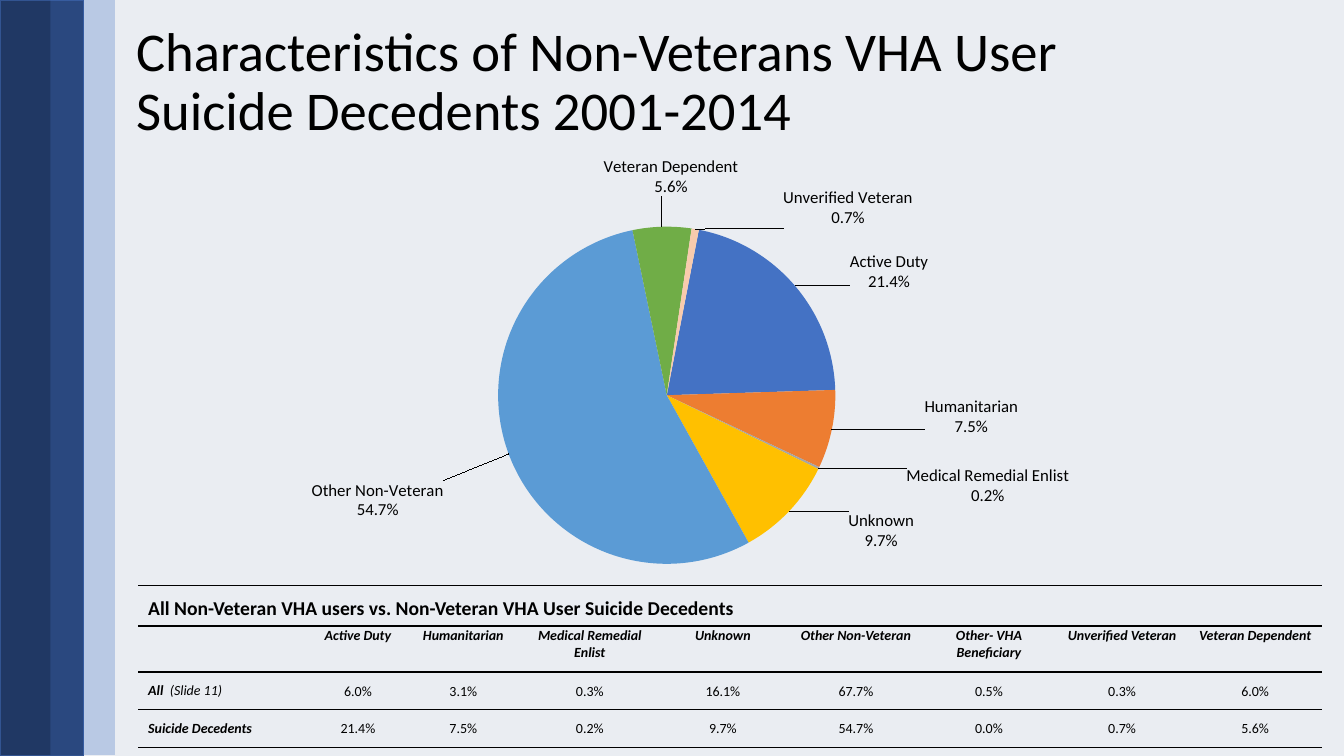
from pptx import Presentation
from pptx.chart.data import CategoryChartData
from pptx.dml.color import RGBColor
from pptx.enum import chart as charts, shapes, text
from pptx.oxml import parse_xml
from pptx.oxml.ns import nsdecls, qn
from pptx.util import Inches, Pt

COLORS = {"page": "EAEDF2", "ink": "000000", "navy": "203864",
          "edge": "325491", "blue": "4472C4"}
FONT = "Calibri"

# Slice: name, percent, colour, label shift as a share of the chart
SLICES = [
    ("Active Duty", 21.4, "4472C4", 0.055, 0.02),
    ("Humanitarian", 7.5, "ED7D31", 0.095, -0.07),
    ("Medical Remedial Enlist", 0.2, "A5A5A5", 0.09, -0.01),
    ("Unknown", 9.7, "FFC000", 0.06, -0.01),
    ("Other Non-Veteran", 54.7, "5B9BD5", -0.065, 0.05),
    ("Veteran Dependent", 5.6, "70AD47", 0.01, -0.05),
    ("Unverified Veteran", 0.7, "F8CBAD", 0.095, 0.01),
]
TABLE_TITLE = "All Non-Veteran VHA users vs. Non-Veteran VHA User Suicide Decedents"
ROWS = [
    ["", "Active Duty", "Humanitarian", "Medical Remedial Enlist", "Unknown",
     "Other Non-Veteran", "Other- VHA Beneficiary", "Unverified Veteran",
     "Veteran Dependent"],
    ["All  ", "6.0%", "3.1%", "0.3%", "16.1%", "67.7%", "0.5%", "0.3%", "6.0%"],
    ["Suicide Decedents", "21.4%", "7.5%", "0.2%", "9.7%", "54.7%", "0.0%",
     "0.7%", "5.6%"],
]


def style(font, size, bold=False, italic=False):
    font.name, font.size = FONT, Pt(size)
    font.bold, font.italic = bold, italic
    font.color.rgb = RGBColor.from_string(COLORS["ink"])


def rule_cell(cell, top, bottom):
    props = cell._tc.get_or_add_tcPr()
    for position, (side, width) in enumerate(
            [("lnL", 0), ("lnR", 0), ("lnT", top), ("lnB", bottom)]):
        fill = (f'<a:solidFill><a:srgbClr val="{COLORS["ink"]}"/></a:solidFill>'
                if width else "<a:noFill/>")
        props.insert(position, parse_xml(
            f'<a:{side} {nsdecls("a")} w="{Pt(width)}">{fill}</a:{side}>'))


deck = Presentation()
deck.slide_width, deck.slide_height = Inches(13.33), Inches(7.5)
page = deck.slides.add_slide(deck.slide_layouts[5])
page.background.fill.solid()
page.background.fill.fore_color.rgb = RGBColor.from_string(COLORS["page"])

# Title
title = page.shapes.title
title.left, title.top = Inches(1.25), Inches(0.08)
title.width, title.height = Inches(10.58), Inches(1.5)
title.text_frame.text = "Characteristics of Non-Veterans VHA User Suicide Decedents 2001-2014"
title.text_frame.word_wrap = True
title.text_frame.auto_size = text.MSO_AUTO_SIZE.NONE
title.text_frame.vertical_anchor = text.MSO_ANCHOR.MIDDLE
para = title.text_frame.paragraphs[0]
para.alignment, para.line_spacing = text.PP_ALIGN.LEFT, 0.9
style(para.runs[0].font, 39)

# Pie chart
data = CategoryChartData(number_format="0.0")
data.categories = [item[0] for item in SLICES]
data.add_series("Series 1", [item[1] for item in SLICES])
chart = page.shapes.add_chart(
    charts.XL_CHART_TYPE.PIE, Inches(2.5), Inches(1.42),
    Inches(9.07), Inches(4.82), data).chart
chart.has_legend = chart.has_title = False
style(chart.font, 10)
plot = chart.plots[0]
plot.vary_by_categories = True
pie = plot._element
angle = pie.find(qn("c:firstSliceAng"))
if angle is None:
    angle = parse_xml(f'<c:firstSliceAng {nsdecls("c")}/>')
    pie.append(angle)
angle.set("val", "11")

# Plot area placement
area = chart._chartSpace.chart.plotArea
for layout in area.findall(qn("c:layout")):
    area.remove(layout)
area.insert(0, parse_xml(
    f'<c:layout {nsdecls("c")}><c:manualLayout><c:layoutTarget val="inner"/>'
    '<c:xMode val="edge"/><c:yMode val="edge"/><c:x val="0.26"/><c:y val="0.172"/>'
    '<c:w val="0.387"/><c:h val="0.694"/></c:manualLayout></c:layout>'))

# Slices and their shifted labels
series = plot.series[0]
labels = series.data_labels
labels.show_value = labels.show_category_name = True
labels.show_percentage = False
labels.number_format, labels.number_format_is_linked = '0.0"%"', False
labels.position = charts.XL_LABEL_POSITION.OUTSIDE_END
style(labels.font, 12)
for index, (name, value, color, shift_x, shift_y) in enumerate(SLICES):
    fill = series.points[index].format.fill
    fill.solid()
    fill.fore_color.rgb = RGBColor.from_string(color)
    labels._element.insert(index, parse_xml(
        f'<c:dLbl {nsdecls("c")}><c:idx val="{index}"/><c:layout><c:manualLayout>'
        f'<c:x val="{shift_x}"/><c:y val="{shift_y}"/></c:manualLayout></c:layout>'
        '<c:dLblPos val="outEnd"/><c:showLegendKey val="0"/><c:showVal val="1"/>'
        '<c:showCatName val="1"/><c:showSerName val="0"/><c:showPercent val="0"/>'
        '<c:showBubbleSize val="0"/><c:separator>\n</c:separator></c:dLbl>'))

# Comparison table
widths = [1.73, 0.9, 1.19] + [1.32] * 6
heights = [0.4, 0.46, 0.37, 0.38]
table = page.shapes.add_table(
    len(heights), len(widths), Inches(1.37), Inches(5.81),
    Inches(sum(widths)), Inches(sum(heights))).table
table.first_row = table.horz_banding = False
for column, width in zip(table.columns, widths):
    column.width = Inches(width)
for row, height in zip(table.rows, heights):
    row.height = Inches(height)
table.cell(0, 0).merge(table.cell(0, len(widths) - 1))

rules = [1, 1, 1.5, 1, 1]
for r, words in enumerate([[TABLE_TITLE] + [""] * 8] + ROWS):
    for c, word in enumerate(words):
        cell = table.cell(r, c)
        cell.fill.background()
        rule_cell(cell, rules[r], rules[r + 1])
        cell.text_frame.text = word
        para = cell.text_frame.paragraphs[0]
        heading = r == 1 or c == 0
        style(para.font, 14 if r == 0 else 10, heading, heading and r > 0)
        for span in para.runs:
            style(span.font, 14 if r == 0 else 10, heading, heading and r > 0)
        cell.vertical_anchor = [text.MSO_ANCHOR.BOTTOM, text.MSO_ANCHOR.TOP,
                                text.MSO_ANCHOR.MIDDLE, text.MSO_ANCHOR.MIDDLE][r]
        if r and c:
            para.alignment = text.PP_ALIGN.CENTER
            cell.margin_left = cell.margin_right = cell.margin_top = Inches(0.01)
            cell.margin_bottom = 0
span = table.cell(2, 0).text_frame.paragraphs[0].add_run()
span.text = "(Slide 11)"
style(span.font, 10, italic=True)

# Side bars
bars = page.shapes.add_group_shape()
for left, top, width, color in [(0, 0, 0.83, "navy"), (0.5, -0.01, 0.64, "blue")]:
    bar = bars.shapes.add_shape(shapes.MSO_SHAPE.RECTANGLE, Inches(left),
                                Inches(top), Inches(width), deck.slide_height)
    bar.shadow.inherit = False
    bar.fill.solid()
    bar.fill.fore_color.rgb = RGBColor.from_string(COLORS[color])
    if color == "navy":
        bar.line.color.rgb = RGBColor.from_string(COLORS["edge"])
        bar.line.width = Pt(1)
    else:
        bar.line.fill.background()
        tint = bar._element.spPr.find(qn("a:solidFill"))[0]
        tint.append(parse_xml(f'<a:alpha {nsdecls("a")} val="29000"/>'))

deck.save("out.pptx")
